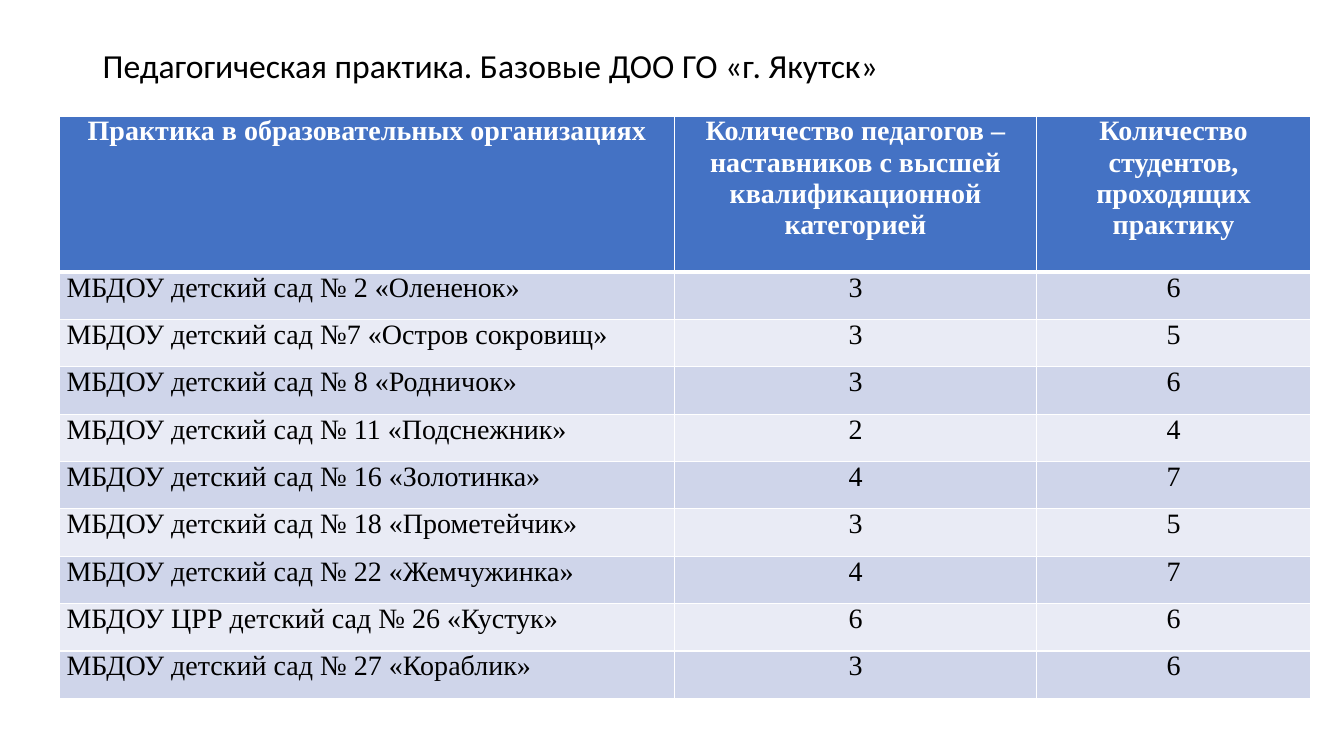
from dataclasses import dataclass

from lxml.etree import SubElement
from pptx import Presentation
from pptx.dml.color import RGBColor as Color
from pptx.enum.text import MSO_ANCHOR as Anchor, PP_ALIGN as Align
from pptx.oxml.ns import qn
from pptx.util import Inches, Pt


@dataclass(frozen=True)
class Theme:
    title_font: str = "Calibri"
    table_font: str = "Times New Roman"
    title_size: int = 24
    table_size: int = 20
    text: str = "000000"
    white: str = "FFFFFF"
    header: str = "4472C4"
    bands: tuple = ("CFD5EA", "E9EBF5")


theme = Theme()

HEADERS = (
    "Практика в образовательных организациях",
    "Количество педагогов – наставников с высшей квалификационной категорией",
    "Количество студентов, проходящих практику",
)
KINDERGARTENS = (
    ("МБДОУ детский сад № 2 «Олененок»", 3, 6),
    ("МБДОУ детский сад №7 «Остров сокровищ»", 3, 5),
    ("МБДОУ детский сад № 8 «Родничок»", 3, 6),
    ("МБДОУ детский сад № 11 «Подснежник»", 2, 4),
    ("МБДОУ детский сад № 16 «Золотинка»", 4, 7),
    ("МБДОУ детский сад № 18 «Прометейчик»", 3, 5),
    ("МБДОУ детский сад № 22 «Жемчужинка»", 4, 7),
    ("МБДОУ ЦРР детский сад № 26 «Кустук»", 6, 6),
    ("МБДОУ детский сад № 27 «Кораблик»", 3, 6),
)
COLUMN_WIDTHS = (6.1, 3.59, 2.72)
HEADER_HEIGHT, ROW_HEIGHT = 1.55, 0.47


def add_span(para, text, font, size, color, bold=False):
    span = para.add_run()
    span.text = text
    span.font.name = font
    span.font.size = Pt(size)
    span.font.color.rgb = Color.from_string(color)
    span.font.bold = bold


def add_borders(cell, widths):
    """Draw white borders; widths maps the sides L, R, T, B to points."""
    properties = cell._tc.get_or_add_tcPr()
    for side, width in widths.items():
        line = SubElement(properties, qn(f"a:ln{side}"), w=str(Pt(width)))
        fill = SubElement(line, qn("a:solidFill"))
        SubElement(fill, qn("a:srgbClr"), val=theme.white)


deck = Presentation()
deck.slide_width, deck.slide_height = Inches(13.33), Inches(7.5)
page = deck.slides.add_slide(deck.slide_layouts[6])

title = page.shapes.add_textbox(Inches(0.92), Inches(0.4), Inches(11.5), Inches(0.55))
title.text_frame.word_wrap = True
title.text_frame.vertical_anchor = Anchor.MIDDLE
title_para = title.text_frame.paragraphs[0]
title_para.line_spacing = 0.9
add_span(title_para, "Педагогическая практика. Базовые ДОО ГО «г. Якутск»",
         theme.title_font, theme.title_size, theme.text)

rows = (HEADERS, *KINDERGARTENS)
table_height = HEADER_HEIGHT + ROW_HEIGHT * len(KINDERGARTENS)
table = page.shapes.add_table(
    len(rows), len(HEADERS), Inches(0.59), Inches(1.15),
    Inches(sum(COLUMN_WIDTHS)), Inches(table_height)).table
for column, width in zip(table.columns, COLUMN_WIDTHS):
    column.width = Inches(width)

for row_index, values in enumerate(rows):
    is_header = row_index == 0
    table.rows[row_index].height = Inches(HEADER_HEIGHT if is_header else ROW_HEIGHT)
    band = theme.header if is_header else theme.bands[(row_index - 1) % 2]
    for column_index, value in enumerate(values):
        cell = table.cell(row_index, column_index)
        cell.margin_left = cell.margin_right = Inches(0.07)
        cell.margin_top = cell.margin_bottom = 0
        add_borders(cell, {"L": 1, "R": 1, "T": 3 if row_index == 1 else 1,
                           "B": 3 if is_header else 1})
        cell.fill.solid()
        cell.fill.fore_color.rgb = Color.from_string(band)
        para = cell.text_frame.paragraphs[0]
        is_name = column_index == 0 and not is_header
        para.alignment = Align.JUSTIFY if is_name else Align.CENTER
        add_span(para, str(value), theme.table_font, theme.table_size,
                 theme.white if is_header else theme.text, is_header)

deck.save("out.pptx")
